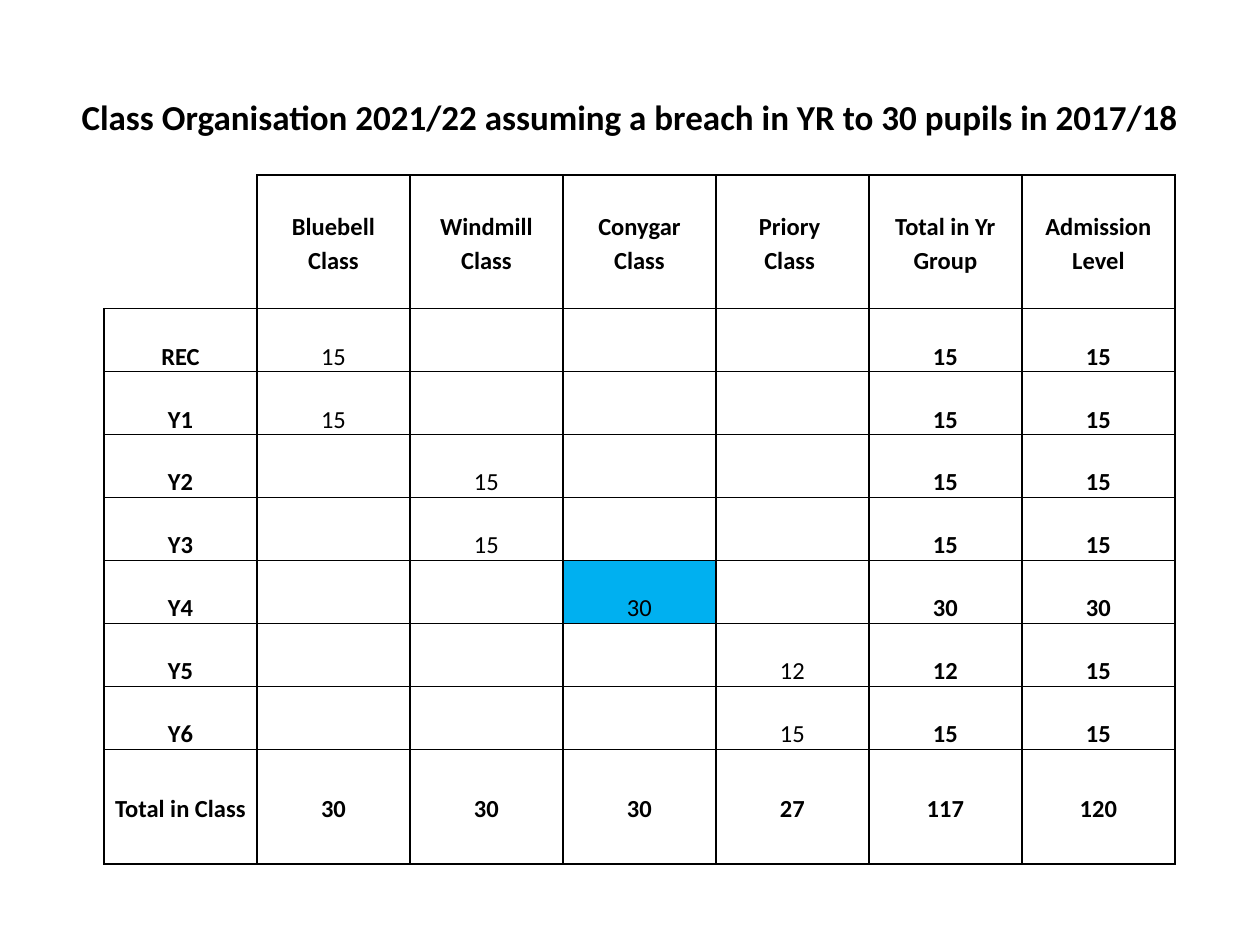
from dataclasses import dataclass

from lxml.etree import SubElement
from pptx import Presentation
from pptx.dml.color import RGBColor
from pptx.enum.text import MSO_ANCHOR, PP_ALIGN
from pptx.oxml.ns import qn
from pptx.util import Pt

PX = 914400 // 126
BLACK = "000000"
BLUE = "00B0F0"

TITLE = "Class Organisation 2021/22 assuming a breach in YR to 30 pupils in 2017/18"
HEADS = ["Bluebell Class", "Windmill Class", "Conygar Class",
         "Priory \nClass ", "Total in Yr Group", "Admission Level"]
TOTALS = ["Total in Class", "30", "30", "30", "27", "117", "120"]


@dataclass
class Year:
    name: str
    room: int  # table column of the class that takes this year
    count: int
    level: int = 15
    fill: str = ""


YEARS = [
    Year("REC", 1, 15),
    Year("Y1", 1, 15),
    Year("Y2", 2, 15),
    Year("Y3", 2, 15),
    Year("Y4", 3, 30, 30, BLUE),
    Year("Y5", 4, 12),
    Year("Y6", 4, 15),
]
WIDTHS = [153] * 7
HEIGHTS = [65, 66] + [63] * len(YEARS) + [115]


def px(n: int) -> int:
    return n * PX


def color(code: str) -> RGBColor:
    return RGBColor.from_string(code)


def write(frame, text: str, size: int = 14, bold: bool = True,
          space: float = 1.15) -> None:
    frame.text = text
    for para in frame.paragraphs:
        para.alignment = PP_ALIGN.CENTER
        para.line_spacing = space
        for run in para.runs:
            font = run.font
            font.name, font.size, font.bold = "Calibri", Pt(size), bold
            font.color.rgb = color(BLACK)


def border(cell, bare: str = "") -> None:
    """Rule each side of a cell in black, save the bare ones."""
    props = cell._tc.get_or_add_tcPr()
    for side in "LRTB":
        line = SubElement(props, qn(f"a:ln{side}"), w=str(Pt(1)))
        if side in bare:
            SubElement(line, qn("a:noFill"))
        else:
            fill = SubElement(line, qn("a:solidFill"))
            SubElement(fill, qn("a:srgbClr"), val=BLACK)


def put(cell, text: str, bold: bool = True,
        anchor: MSO_ANCHOR = MSO_ANCHOR.MIDDLE) -> None:
    cell.margin_left = cell.margin_right = px(9)
    cell.margin_top = cell.margin_bottom = 0
    cell.vertical_anchor = anchor
    write(cell.text_frame, text, bold=bold)


def draw_title(slide) -> None:
    title = slide.shapes.title
    title.left, title.top, title.width, title.height = map(px, (63, 38, 1134, 157))
    title.text_frame.vertical_anchor = MSO_ANCHOR.MIDDLE
    write(title.text_frame, TITLE, size=20, space=1.0)


def draw_table(slide) -> None:
    table = slide.shapes.add_table(
        len(HEIGHTS), len(WIDTHS), px(104), px(175),
        px(sum(WIDTHS)), px(sum(HEIGHTS))).table
    table.first_row = table.horz_banding = False
    for col, width in zip(table.columns, WIDTHS):
        col.width = px(width)
    for row, height in zip(table.rows, HEIGHTS):
        row.height = px(height)

    # Grid lines, with the top left corner left open
    bare = {(0, 0): "LTB", (1, 0): "LT"}
    for r in range(len(HEIGHTS)):
        for c in range(len(WIDTHS)):
            cell = table.cell(r, c)
            border(cell, bare.get((r, c), ""))
            cell.fill.background()

    # Heads span two rows
    for c, head in enumerate(HEADS, 1):
        table.cell(0, c).merge(table.cell(1, c))
        put(table.cell(0, c), head)

    # One row for each year
    for r, year in enumerate(YEARS, 2):
        texts = {0: year.name, year.room: year.count, 5: year.count, 6: year.level}
        for c, text in texts.items():
            put(table.cell(r, c), str(text), bold=c != year.room,
                anchor=MSO_ANCHOR.BOTTOM)
        if year.fill:
            fill = table.cell(r, year.room).fill
            fill.solid()
            fill.fore_color.rgb = color(year.fill)

    # Totals
    for c, text in enumerate(TOTALS):
        put(table.cell(len(HEIGHTS) - 1, c), text)


def main() -> None:
    deck = Presentation()
    deck.slide_width, deck.slide_height = px(1260), px(945)
    slide = deck.slides.add_slide(deck.slide_layouts[5])
    draw_title(slide)
    draw_table(slide)
    deck.save("out.pptx")


if __name__ == "__main__":
    main()
